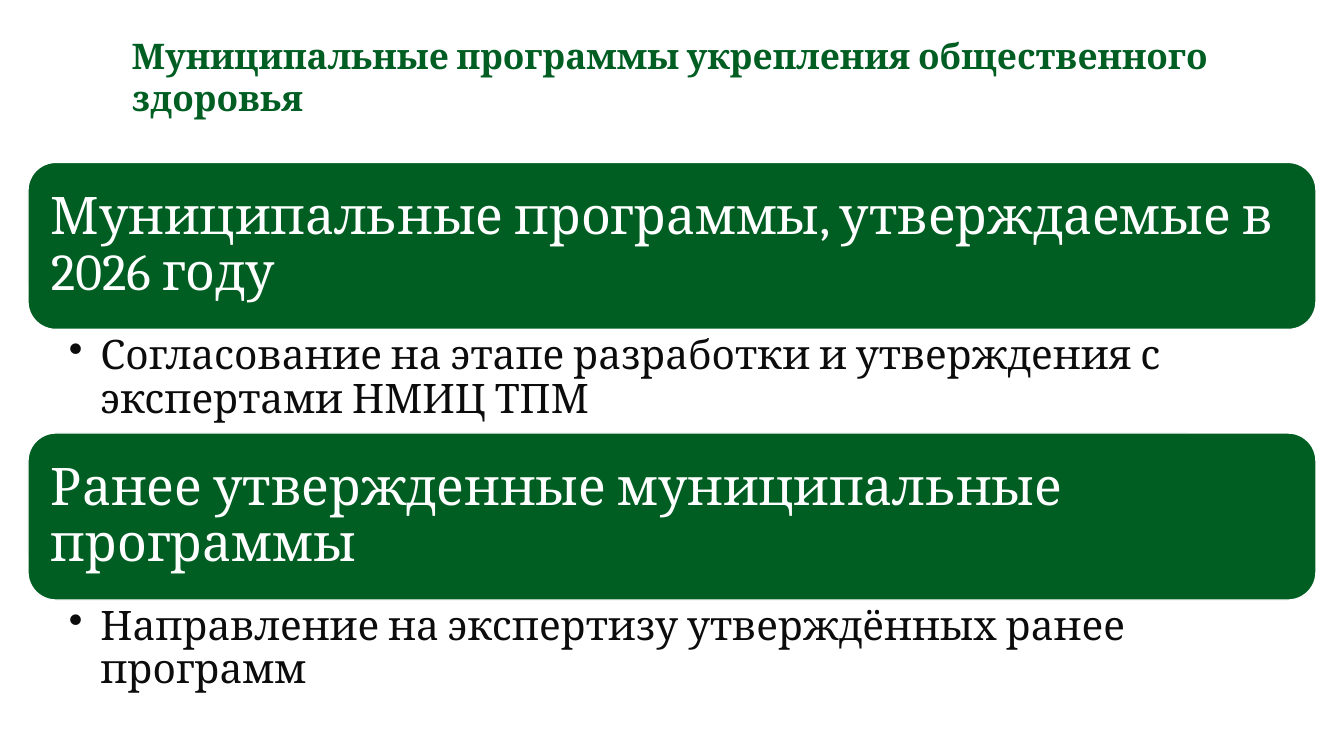
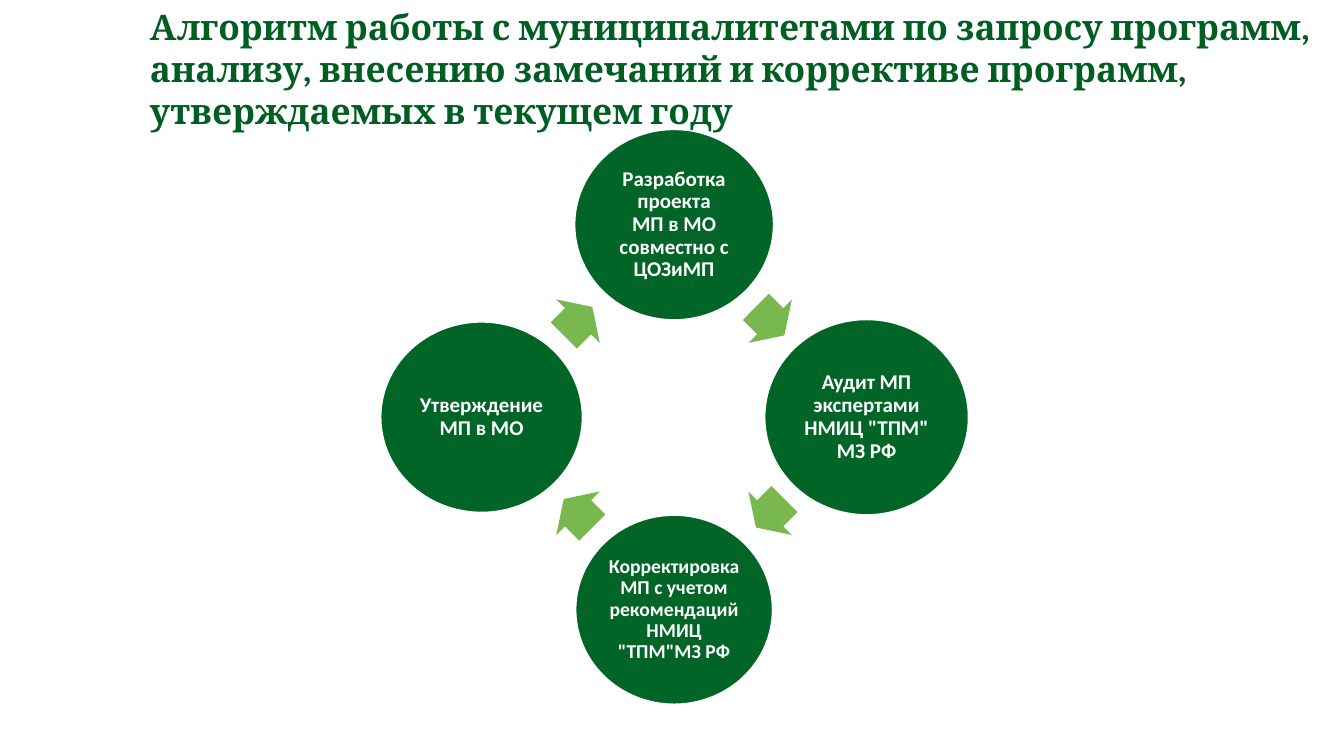
from dataclasses import dataclass
from math import cos, radians, sin

from lxml.etree import SubElement
from pptx import Presentation
from pptx.dml.color import RGBColor
from pptx.enum.shapes import MSO_SHAPE as Preset
from pptx.enum.text import MSO_ANCHOR as Anchor, PP_ALIGN as Align
from pptx.oxml.ns import qn
from pptx.util import Pt


@dataclass(frozen=True)
class Theme:
    title_color: str = "005E23"
    panel_color: str = "005E23"
    step_color: str = "006526"
    arrow_color: str = "79B74F"
    body_color: str = "0C0C0C"
    white: str = "FFFFFF"
    serif: str = "Cambria"
    sans: str = "Calibri"
    title_size: float = 25.2
    panel_size: float = 37
    bullet_size: float = 29
    step_size: float = 15
    small_step_size: float = 14


@dataclass(frozen=True)
class Box:
    left: float
    top: float
    width: float
    height: float

    @property
    def points(self):
        return Pt(self.left), Pt(self.top), Pt(self.width), Pt(self.height)

    @property
    def center(self):
        return self.left + self.width / 2, self.top + self.height / 2


THEME = Theme()


def centered_box(x, y, width, height):
    return Box(x - width / 2, y - height / 2, width, height)


def polar(center, radius, degrees):
    angle = radians(degrees)
    return center[0] + radius * sin(angle), center[1] - radius * cos(angle)


def write(shape, lines, font, size, color, bold=False, anchor=Anchor.TOP,
          align=Align.LEFT, insets=(7.2, 3.6, 7.2, 3.6), spacing=0.9):
    frame = shape.text_frame
    frame.word_wrap = True
    frame.vertical_anchor = anchor
    (frame.margin_left, frame.margin_top,
     frame.margin_right, frame.margin_bottom) = map(Pt, insets)
    para = frame.paragraphs[0]
    para.alignment = align
    para.line_spacing = spacing
    for number, line in enumerate(lines):
        if number:
            para.add_line_break()
        span = para.add_run()
        span.text = line
        span.font.name = font
        span.font.size = Pt(size)
        span.font.bold = bold
        span.font.color.rgb = RGBColor.from_string(color)
    return para


def add_preset(page, preset, box, fill, outline=None):
    shape = page.shapes.add_shape(preset, *box.points)
    shape.shadow.inherit = False
    shape.fill.solid()
    shape.fill.fore_color.rgb = RGBColor.from_string(fill)
    if outline:
        shape.line.color.rgb = RGBColor.from_string(outline)
        shape.line.width = Pt(1)
    else:
        shape.line.fill.background()
    return shape


def add_title(page, box, text):
    write(page.shapes.add_textbox(*box.points), [text], THEME.serif,
          THEME.title_size, THEME.title_color, bold=True, spacing=1.0)


def add_bullet(page, box, text):
    para = write(page.shapes.add_textbox(*box.points), [text], THEME.serif,
                 THEME.bullet_size, THEME.body_color, insets=(29.2, 3.6, 20.6, 3.6))
    properties = para._p.get_or_add_pPr()
    properties.set("marL", str(Pt(22.5)))
    properties.set("indent", str(-Pt(22.5)))
    SubElement(properties, qn("a:buChar")).set("char", "•")


def add_sections(page, box, sections):
    panel_height = 119.3
    top = box.top
    for heading, detail, detail_height in sections:
        panel = add_preset(page, Preset.ROUNDED_RECTANGLE,
                           Box(box.left, top, box.width, panel_height),
                           THEME.panel_color, THEME.white)
        write(panel, [heading], THEME.serif, THEME.panel_size, THEME.white,
              anchor=Anchor.MIDDLE, insets=(10.6,) * 4)
        top += panel_height
        add_bullet(page, Box(box.left, top, box.width, detail_height), detail)
        top += detail_height


def add_cycle(page, box, steps):
    step_radius, arrow_radius = 137.5, 97
    turn = 360 / len(steps)
    for number, (lines, width, height, size) in enumerate(steps):
        angle = number * turn
        circle = add_preset(
            page, Preset.OVAL,
            centered_box(*polar(box.center, step_radius, angle), width, height),
            THEME.step_color, THEME.white)
        write(circle, lines, THEME.sans, size, THEME.white, bold=True,
              anchor=Anchor.MIDDLE, align=Align.CENTER, insets=(1.4,) * 4)
        middle = angle + turn / 2
        arrow = add_preset(
            page, Preset.RIGHT_ARROW,
            centered_box(*polar(box.center, arrow_radius, middle), 28.8, 44),
            THEME.arrow_color)
        arrow.adjustments[0] = 0.6
        arrow.adjustments[1] = 0.5
        arrow.rotation = middle


def programs_slide(page):
    add_title(page, Box(87, 21, 842.5, 39),
              "Муниципальные программы укрепления общественного здоровья")
    add_sections(page, Box(20, 116, 920, 361), [
        ("Муниципальные программы, утверждаемые в 2026 году",
         "Согласование на этапе разработки и утверждения с экспертами НМИЦ ТПМ", 74),
        ("Ранее утвержденные муниципальные программы",
         "Направление на экспертизу утверждённых ранее программ", 48),
    ])


def algorithm_slide(page):
    add_title(page, Box(100, 0, 860, 39),
              "Алгоритм работы с муниципалитетами по запросу программ, анализу, "
              "внесению замечаний и коррективе программ, утверждаемых в текущем году")
    add_cycle(page, Box(272, 93, 419, 410), [
        (["Разработка проекта", "МП в МО совместно с ЦОЗиМП"],
         142, 136, THEME.step_size),
        (["Аудит МП экспертами НМИЦ \"ТПМ\"", "МЗ РФ"],
         145.5, 139.5, THEME.step_size),
        (["Корректировка МП с учетом рекомендаций НМИЦ \"ТПМ\"МЗ РФ"],
         140.5, 135, THEME.small_step_size),
        (["Утверждение МП в МО"], 144, 136, THEME.step_size),
    ])


def main():
    deck = Presentation()
    deck.slide_width, deck.slide_height = Pt(960), Pt(540)
    blank = deck.slide_layouts[6]
    for build in (programs_slide, algorithm_slide):
        build(deck.slides.add_slide(blank))
    deck.save("out.pptx")


if __name__ == "__main__":
    main()
